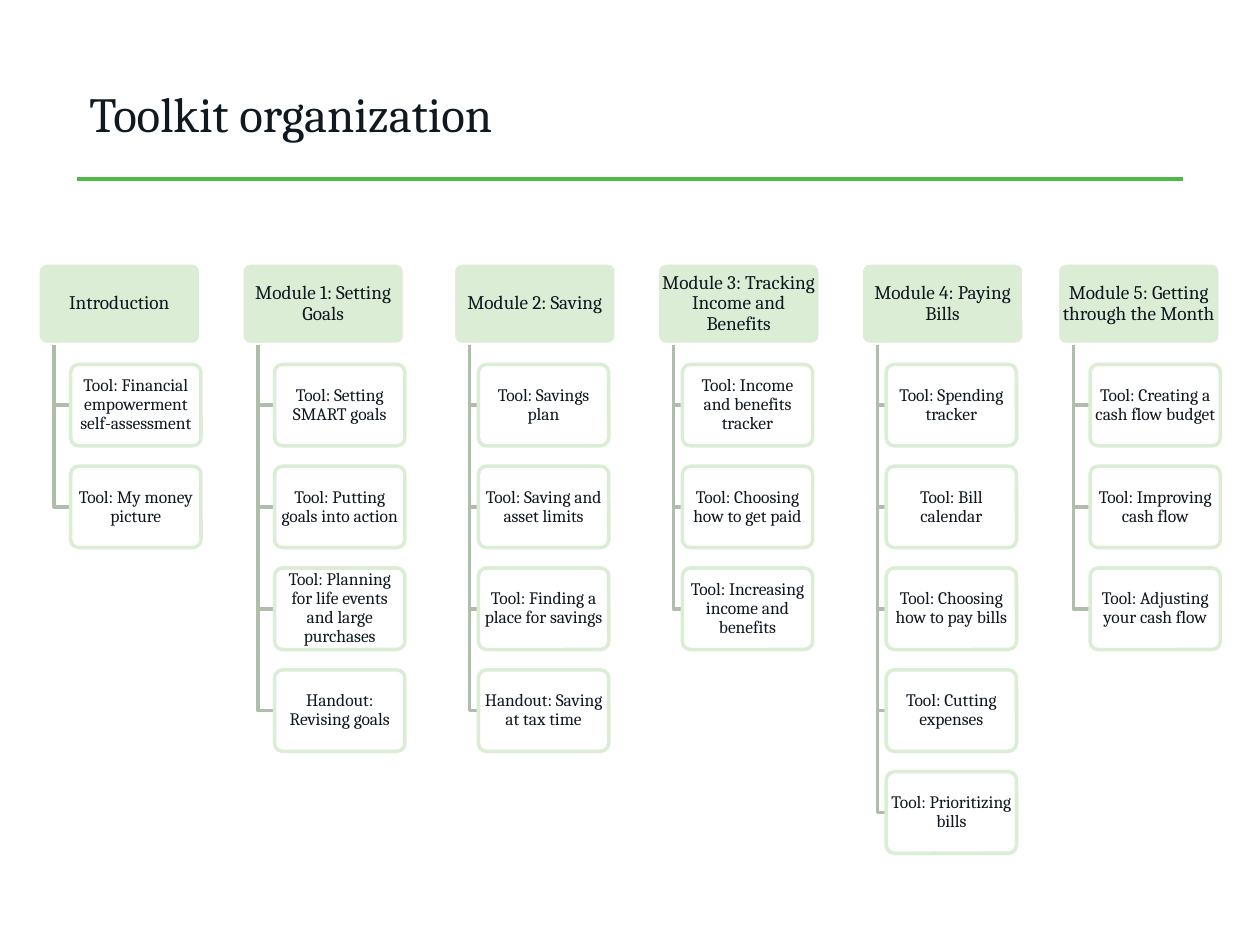
from dataclasses import dataclass

from lxml import etree
from pptx import Presentation
from pptx.dml.color import RGBColor
from pptx.enum.shapes import MSO_CONNECTOR, MSO_SHAPE
from pptx.enum.text import MSO_ANCHOR, PP_ALIGN
from pptx.oxml.ns import qn
from pptx.util import Pt

ROUND = MSO_SHAPE.ROUNDED_RECTANGLE
LINE = MSO_CONNECTOR.STRAIGHT
MIDDLE = MSO_ANCHOR.MIDDLE
LEFT, CENTER = PP_ALIGN.LEFT, PP_ALIGN.CENTER


@dataclass(frozen=True)
class Theme:
    font: str = "Cambria"
    ink: str = "101820"
    rule: str = "50B748"
    pale: str = "DBEDD4"
    stem: str = "AFBEAA"
    white: str = "FFFFFF"
    title: float = 28
    head: float = 11
    tool: float = 10
    line: float = 2


THEME = Theme()

# Grid of the chart, in points
TOOL_X, COL_STEP = 40.4, 116.5
HEAD_Y, TOOL_Y, ROW_STEP = 150.3, 208.2, 58.2
HEAD_W, TOOL_W, BOX_H = 93.1, 74.5, 46.6
STEM_IN = 9.3
WIDE, SLIM = 18.7, 14.3

# Heading, indent of the tools, tools
COLS = [
    ("Introduction", WIDE, [
        "Tool: Financial empowerment self-assessment",
        "Tool: My money picture"]),
    ("Module 1: Setting Goals", WIDE, [
        "Tool: Setting SMART goals",
        "Tool: Putting goals into action",
        "Tool: Planning for life events and large purchases",
        "Handout: Revising goals"]),
    ("Module 2: Saving", SLIM, [
        "Tool: Savings plan",
        "Tool: Saving and asset limits",
        "Tool: Finding a place for savings",
        "Handout: Saving at tax time"]),
    ("Module 3: Tracking Income and Benefits", SLIM, [
        "Tool: Income and benefits tracker",
        "Tool: Choosing how to get paid",
        "Tool: Increasing income and benefits"]),
    ("Module 4: Paying Bills", SLIM, [
        "Tool: Spending tracker",
        "Tool: Bill calendar",
        "Tool: Choosing how to pay bills",
        "Tool: Cutting expenses",
        "Tool: Prioritizing bills"]),
    ("Module 5: Getting through the Month", WIDE, [
        "Tool: Creating a cash flow budget",
        "Tool: Improving cash flow",
        "Tool: Adjusting your cash flow"]),
]


def color(code):
    return RGBColor.from_string(code)


def stroke(line, code):
    line.color.rgb = color(code)
    line.width = Pt(THEME.line)


def write(shape, text, size, align=CENTER, inset=(1.2, 0.8), space=0.9):
    frame = shape.text_frame
    frame.word_wrap = True
    frame.vertical_anchor = MIDDLE
    frame.margin_left = frame.margin_right = Pt(inset[0])
    frame.margin_top = frame.margin_bottom = Pt(inset[1])
    para = frame.paragraphs[0]
    para.alignment = align
    para.line_spacing = space
    run = para.add_run()
    run.text = text
    run.font.name = THEME.font
    run.font.size = Pt(size)
    run.font.color.rgb = color(THEME.ink)


def fade(shape, share):
    tint = shape.fill._xPr.find(qn("a:solidFill"))[0]
    etree.SubElement(tint, qn("a:alpha")).set("val", str(share * 1000))


def box(group, text, x, y, width, fill, edge, size):
    shape = group.shapes.add_shape(ROUND, Pt(x), Pt(y), Pt(width), Pt(BOX_H))
    shape.adjustments[0] = 0.1
    shape.shadow.inherit = False
    shape.fill.solid()
    shape.fill.fore_color.rgb = color(fill)
    stroke(shape.line, edge)
    write(shape, text, size)
    return shape


def elbow(group, x, top, end, y):
    pen = group.shapes.build_freeform(Pt(x), Pt(top))
    pen.add_line_segments([(Pt(x), Pt(y)), (Pt(end), Pt(y))], close=False)
    shape = pen.convert_to_shape()
    shape.shadow.inherit = False
    shape.fill.background()
    stroke(shape.line, THEME.stem)


def column(group, left, head, indent, tools):
    start = left - indent
    box(group, head, start, HEAD_Y, HEAD_W, THEME.pale, THEME.white, THEME.head)
    for row, tool in enumerate(tools):
        y = TOOL_Y + row * ROW_STEP
        elbow(group, start + STEM_IN, HEAD_Y + BOX_H, left, y + BOX_H / 2)
        card = box(group, tool, left, y, TOOL_W, THEME.white, THEME.pale, THEME.tool)
        fade(card, 90)


def rule(slide, x, y, end):
    line = slide.shapes.add_connector(LINE, Pt(x), Pt(y), Pt(end), Pt(y))
    stroke(line.line, THEME.rule)
    etree.SubElement(line._element.spPr, qn("a:effectLst"))


def main():
    deck = Presentation()
    deck.slide_width, deck.slide_height = Pt(720), Pt(540)
    slide = deck.slides.add_slide(deck.slide_layouts[5])

    # Title and rule
    title = slide.shapes.title
    title.left, title.top = Pt(43.9), Pt(35.3)
    title.width, title.height = Pt(632.9), Pt(58.3)
    write(title, "Toolkit organization", THEME.title, align=LEFT,
          inset=(7.2, 3.6), space=1.0)
    rule(slide, 43.9, 102.2, 676.1)

    # One column per module
    group = slide.shapes.add_group_shape()
    for spot, (head, indent, tools) in enumerate(COLS):
        column(group, TOOL_X + spot * COL_STEP, head, indent, tools)

    deck.save("out.pptx")


if __name__ == "__main__":
    main()
